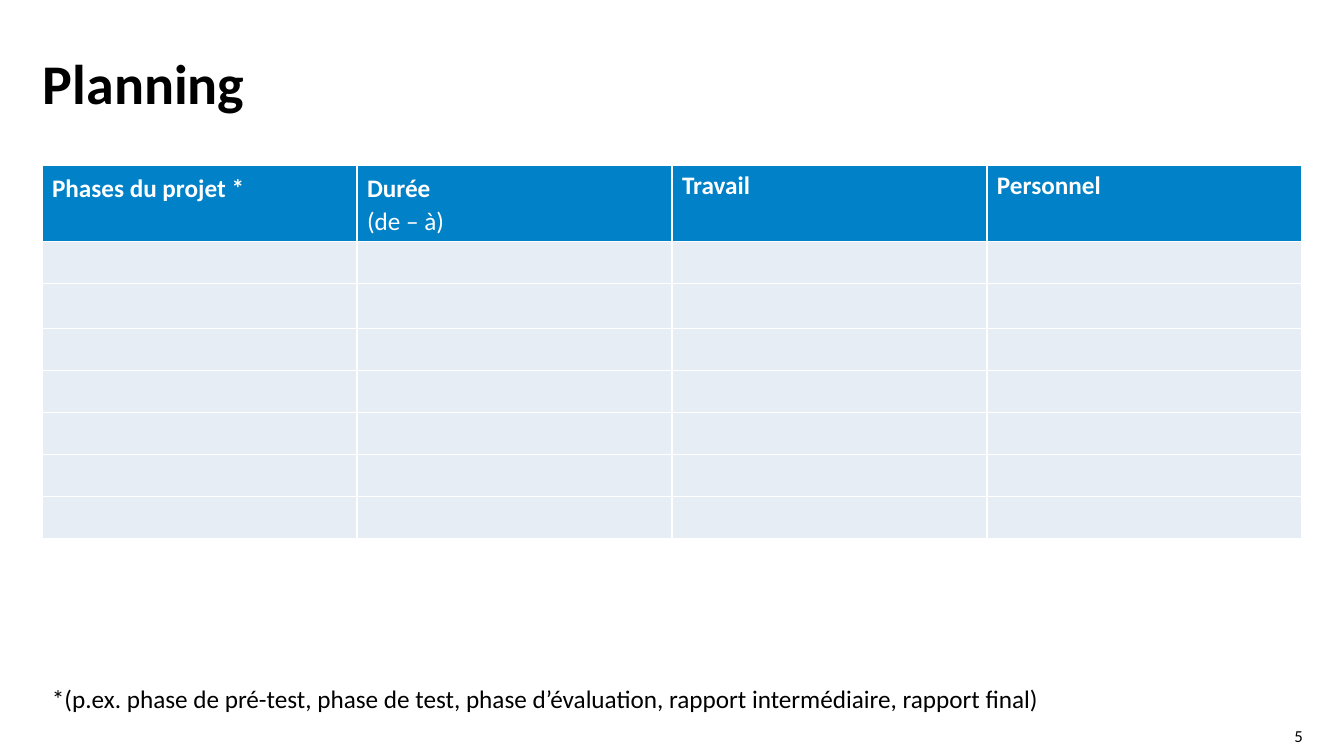
"""Build the project planning slide with its phase table."""
from pptx import Presentation
from pptx import util as u
from pptx.dml.color import RGBColor
from pptx.enum import text

BLACK = RGBColor(0x00, 0x00, 0x00)
WHITE = RGBColor(0xFF, 0xFF, 0xFF)
BLUE = RGBColor(0x00, 0x81, 0xC8)
PALE = RGBColor(0xE7, 0xED, 0xF5)
FONT = "Calibri"


def px(*sizes):
    return [u.Emu(round(n * 914400 / 100.8)) for n in sizes]


def write(para, words, size, color, bold=False):
    run = para.add_run()
    run.text = words
    font = run.font
    font.name, font.size, font.bold = FONT, u.Pt(size), bold
    font.color.rgb = color


deck = Presentation()
deck.slide_width, deck.slide_height = px(1344, 756)
slide = deck.slides.add_slide(deck.slide_layouts[6])

LEFT, RIGHT = text.PP_ALIGN.LEFT, text.PP_ALIGN.RIGHT
TOP, MIDDLE = text.MSO_ANCHOR.TOP, text.MSO_ANCHOR.MIDDLE
NOTE = ("*(p.ex. phase de pré-test, phase de test, phase d’évaluation, "
        "rapport intermédiaire, rapport final)")
boxes = [
    ("Planning", (43, 56, 1008, 86), 40, True, LEFT, TOP, (0, 0), 0.9),
    (NOTE, (42, 678, 1260, 40), 18, False, LEFT, TOP, (10, 5), 1.0),
    ("5", (1256, 726, 47, 20), 12, False, RIGHT, MIDDLE, (0, 0), 1.0),
]
for words, place, size, bold, align, anchor, inset, space in boxes:
    frame = slide.shapes.add_textbox(*px(*place)).text_frame
    frame.word_wrap = True
    frame.vertical_anchor = anchor
    side, edge = px(*inset)
    frame.margin_left = frame.margin_right = side
    frame.margin_top = frame.margin_bottom = edge
    para = frame.paragraphs[0]
    para.alignment = align
    para.line_spacing = space
    write(para, words, size, BLACK, bold)

heads = [
    (["Phases du projet *"], 1.1),
    (["Durée", "(de – à)"], 1.1),
    (["Travail"], 1.0),
    (["Personnel"], 1.0),
]
rows = [72, 42, 45] + [42] * 5
table = slide.shapes.add_table(
    len(rows), len(heads), *px(42, 165, 1260, sum(rows))).table
table.horz_banding = False
for row, high in zip(table.rows, px(*rows)):
    row.height = high
    for cell in row.cells:
        cell.fill.solid()
        cell.fill.fore_color.rgb = PALE

for col, (lines, space) in enumerate(heads):
    table.columns[col].width = px(315)[0]
    cell = table.cell(0, col)
    cell.fill.fore_color.rgb = BLUE
    frame = cell.text_frame
    for n, words in enumerate(lines):
        para = frame.add_paragraph() if n else frame.paragraphs[0]
        para.line_spacing = space
        write(para, words, 18, WHITE, n == 0)

deck.save("out.pptx")
